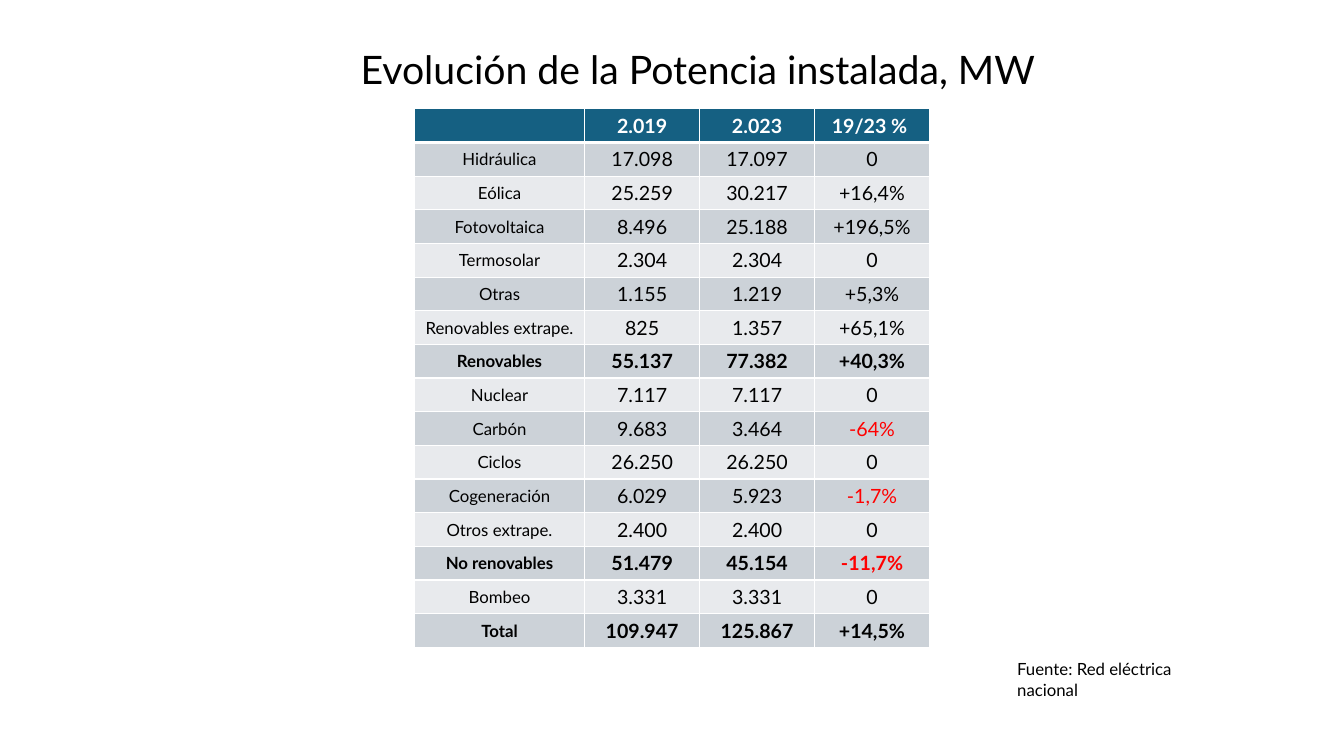
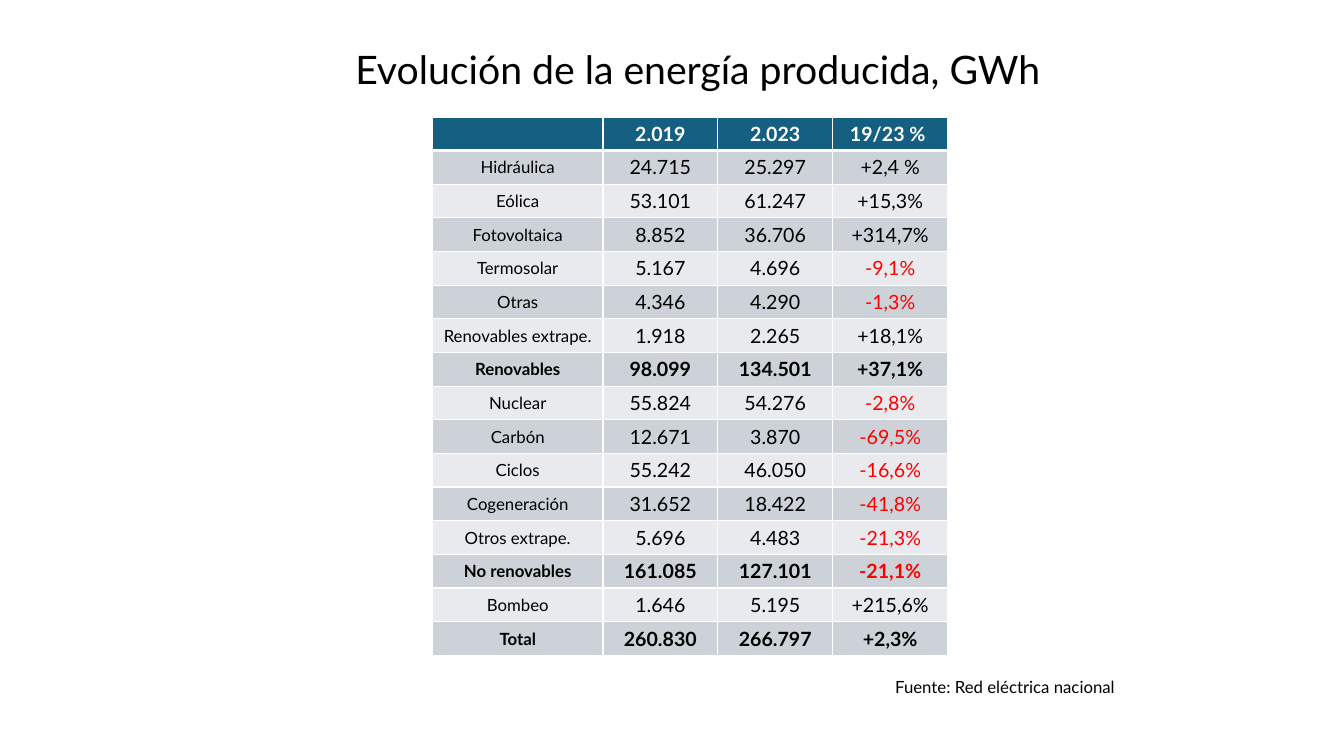
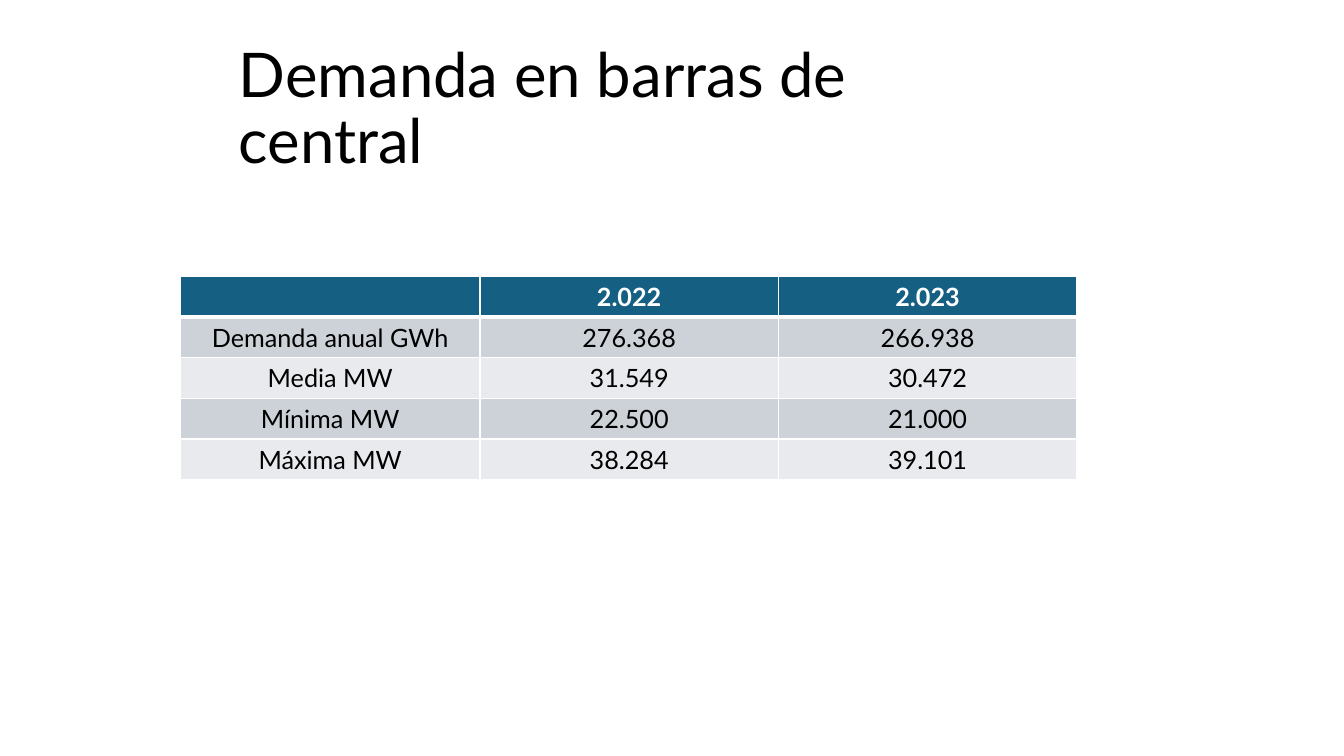
from lxml import etree
from pptx import Presentation
from pptx.dml.color import RGBColor
from pptx.enum import text as t
from pptx.oxml.ns import qn
from pptx.util import Inches, Pt

FONT = "Lato"
BLACK, WHITE, RED = "000000", "FFFFFF", "FF0000"
HEAD, BANDS = "156082", ("CCD2D8", "E8EAED")
CENTER, LEFT = t.PP_ALIGN.CENTER, t.PP_ALIGN.LEFT
MIDDLE, TOP = t.MSO_ANCHOR.MIDDLE, t.MSO_ANCHOR.TOP
WIDE = (1.17, -0.01, 11.5, 1.45)
COLS = (1.69, 1.14, 1.14, 1.14)
YEARS = ("", "2.019", "2.023", "19/23 % ")
TOTALS = ("Renovables", "No renovables", "Total")
SOURCE = "Fuente: Red eléctrica nacional"
KINDS = ("Hidráulica", "Eólica", "Fotovoltaica", "Termosolar", "Otras",
         "Renovables extrape.", "Renovables", "Nuclear", "Carbón", "Ciclos",
         "Cogeneración", "Otros extrape.", "No renovables", "Bombeo", "Total")
POWER = (
    ("17.098", "17.097", "0"),
    ("25.259", "30.217", "+16,4%"),
    ("8.496", "25.188", "+196,5%"),
    ("2.304", "2.304", "0"),
    ("1.155", "1.219", "+5,3%"),
    ("825", "1.357", "+65,1%"),
    ("55.137", "77.382", "+40,3%"),
    ("7.117", "7.117", "0"),
    ("9.683", "3.464", "-64%"),
    ("26.250", "26.250", "0"),
    ("6.029", "5.923", "-1,7%"),
    ("2.400", "2.400", "0"),
    ("51.479", "45.154", "-11,7%"),
    ("3.331", "3.331", "0"),
    ("109.947", "125.867", "+14,5%"),
)
ENERGY = (
    ("24.715", "25.297", "+2,4 %"),
    ("53.101", "61.247", "+15,3%"),
    ("8.852", "36.706", "+314,7%"),
    ("5.167", "4.696", "-9,1%"),
    ("4.346", "4.290", "-1,3%"),
    ("1.918", "2.265", "+18,1%"),
    ("98.099", "134.501", "+37,1%"),
    ("55.824", "54.276", "-2,8%"),
    ("12.671", "3.870", "-69,5%"),
    ("55.242", "46.050", "-16,6%"),
    ("31.652", "18.422", "-41,8%"),
    ("5.696", "4.483", "-21,3%"),
    ("161.085", "127.101", "-21,1%"),
    ("1.646", "5.195", "+215,6%"),
    ("260.830", "266.797", "+2,3%"),
)
DEMAND = (
    ("", "2.022", "2.023"),
    ("Demanda anual GWh", "276.368", "266.938"),
    ("Media MW", "31.549", "30.472"),
    ("Mínima MW", "22.500", "21.000"),
    ("Máxima MW", "38.284", "39.101"),
)


def paint(fmt, color):
    fmt.solid()
    fmt.fore_color.rgb = RGBColor.from_string(color)


def write(frame, words, size, color=BLACK, bold=False, align=LEFT):
    frame.text = words
    para = frame.paragraphs[0]
    para.alignment = align
    for run in para.runs:
        run.font.name = FONT
        run.font.size = Pt(size)
        run.font.bold = bold
        paint(run.font.fill, color)
    if not words:
        etree.SubElement(para._p, qn("a:endParaRPr"), sz=str(size * 100))
    return para


def add_text(slide, box, words, size, align=LEFT, anchor=TOP):
    frame = slide.shapes.add_textbox(*map(Inches, box)).text_frame
    frame.word_wrap = True
    frame.vertical_anchor = anchor
    return write(frame, words, size, align=align)


def add_title(slide, box, words, size, align):
    add_text(slide, box, words, size, align, MIDDLE).line_spacing = 0.9


def add_edges(cell, row):
    props = cell._tc.get_or_add_tcPr()
    heavy = {0: "B", 1: "T"}.get(row)
    for side in "LRTB":
        width = Pt(3 if side == heavy else 1)
        line = etree.SubElement(props, qn("a:ln" + side), w=str(width))
        fill = etree.SubElement(line, qn("a:solidFill"))
        etree.SubElement(fill, qn("a:srgbClr"), val=WHITE)


def add_grid(slide, left, top, cols, height, rows, size, small):
    place = map(Inches, (left, top, sum(cols), height))
    grid = slide.shapes.add_table(len(rows), len(cols), *place).table
    grid.horz_banding = False
    for col, width in zip(grid.columns, cols):
        col.width = Inches(width)
    for r, row in enumerate(rows):
        bold = r == 0 or row[0] in TOTALS
        for c, words in enumerate(row):
            cell = grid.cell(r, c)
            add_edges(cell, r)
            paint(cell.fill, BANDS[(r - 1) % 2] if r else HEAD)
            cell.vertical_anchor = MIDDLE
            color = RED if words.startswith("-") else BLACK
            write(cell.text_frame, words, small if r and c == 0 else size,
                  color if r else WHITE, bold, CENTER)


def add_mix(slide, title, left, top, data, note):
    add_title(slide, WIDE, title, 28, CENTER)
    rows = [YEARS] + [(kind, *vals) for kind, vals in zip(KINDS, data)]
    add_grid(slide, left, top, COLS, 5.33, rows, 14, 12)
    add_text(slide, note, SOURCE, 12)


def main():
    deck = Presentation()
    deck.slide_width, deck.slide_height = Inches(13.33), Inches(7.5)
    power, energy, demand = (
        deck.slides.add_slide(deck.slide_layouts[6]) for _ in range(3))
    add_mix(power, "Evolución de la Potencia instalada, MW",
            4.11, 1.08, POWER, (9.99, 6.49, 1.76, 0.5))
    add_mix(energy, "Evolución de la energía producida, GWh",
            4.29, 1.16, ENERGY, (8.78, 6.66, 3.01, 0.3))
    add_title(demand, (2.27, 0.37, 7.94, 1.45),
              "Demanda en barras de central", 44, LEFT)
    add_grid(demand, 1.79, 2.74, (2.97, 2.96, 2.96), 2.02, DEMAND, 18, 18)
    deck.save("out.pptx")


if __name__ == "__main__":
    main()
